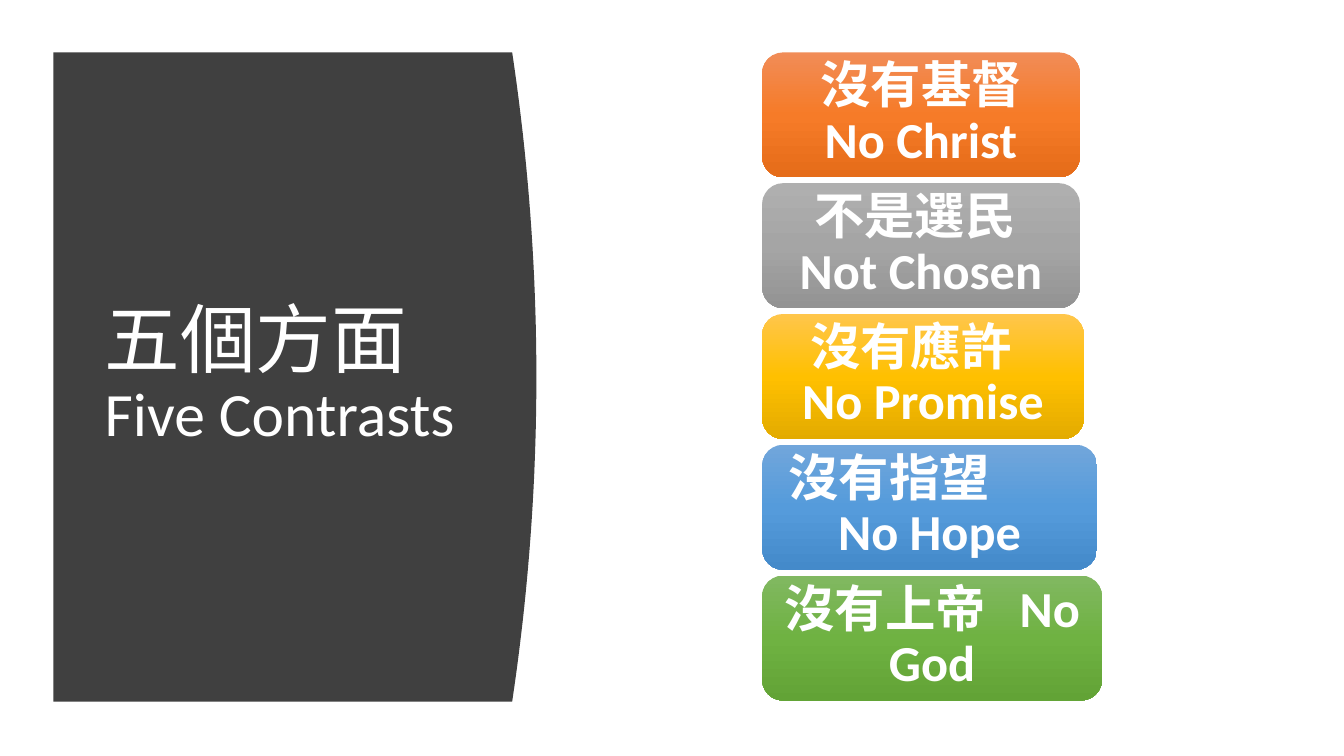
from dataclasses import dataclass

from lxml import etree
from pptx import Presentation
from pptx.dml.color import RGBColor
from pptx.enum.shapes import MSO_SHAPE
from pptx.enum.text import MSO_ANCHOR, PP_ALIGN
from pptx.oxml.ns import qn
from pptx.util import Inches, Pt

ROUND = MSO_SHAPE.ROUNDED_RECTANGLE
MIDDLE = MSO_ANCHOR.MIDDLE
CENTER = PP_ALIGN.CENTER


@dataclass(frozen=True)
class Theme:
    panel: str = "404040"
    text: str = "FFFFFF"
    latin: str = "Calibri"
    head: str = "Roboto"
    han: str = "Noto Sans CJK SC"
    head_size: int = 54
    sub_size: int = 44
    tile_size: int = 36
    spacing: float = 0.9


THEME = Theme()

# Chinese, English, tile width, right indent of the Chinese line, gradient
TILES = [
    ("沒有基督", "No Christ", 3.15, 0, ("F18C57", "F67B28", "E56C19")),
    ("不是選民", "Not Chosen", 3.15, 0.12, ("AFAFAF", "A5A5A5", "939393")),
    ("沒有應許", "No Promise", 3.19, 0.24, ("FFC64B", "FFC000", "E3AB00")),
    ("沒有指望", "No Hope", 3.32, 0.8, ("71A6DB", "559BDB", "448ACA")),
]
LAST = (3.37, ("81B861", "6FB242", "62A336"))


def style(run, face, size, bold=False):
    font = run.font
    font.size, font.bold, font.name = Pt(size), bold, face
    font.color.rgb = RGBColor.from_string(THEME.text)
    east = etree.SubElement(run._r.get_or_add_rPr(), qn("a:ea"))
    east.set("typeface", face)


def shade(shape, colors):
    """Fill with evenly spaced colours from top to bottom."""
    shape.fill.gradient()
    shape.fill.gradient_angle = 270
    stops = shape._element.spPr.find(qn("a:gradFill")).find(qn("a:gsLst"))
    for stop in list(stops):
        stops.remove(stop)
    for i, color in enumerate(colors):
        stop = etree.SubElement(stops, qn("a:gs"), pos=str(i * 50000))
        etree.SubElement(stop, qn("a:srgbClr"), val=color)


def add_panel(slide, x, y, w, h):
    """Dark panel with a bowed right edge, holding the title."""
    bulge, steps = 0.24, 40
    edge = []
    for i in range(steps + 1):
        t = i / steps
        bow = bulge * (1 - (2 * t - 1) ** 2)
        edge.append((Inches(x + w - bulge + bow), Inches(y + h * t)))
    form = slide.shapes.build_freeform(Inches(x), Inches(y))
    form.add_line_segments(edge + [(Inches(x), Inches(y + h))], close=True)
    panel = form.convert_to_shape()
    panel.shadow.inherit = False
    panel.fill.solid()
    panel.fill.fore_color.rgb = RGBColor.from_string(THEME.panel)
    panel.line.fill.background()

    box = slide.shapes.add_textbox(
        Inches(x + 0.41), Inches(y + 0.59), Inches(3.74), Inches(h - 1.2))
    frame = box.text_frame
    frame.word_wrap = True
    frame.vertical_anchor = MIDDLE
    para = frame.paragraphs[0]
    para.text = "五個方面\vFive Contrasts"
    para.line_spacing = THEME.spacing
    style(para.runs[0], THEME.head, THEME.head_size)
    style(para.runs[1], THEME.latin, THEME.sub_size)


def add_tile(slide, x, y, w, h, colors):
    tile = slide.shapes.add_shape(
        ROUND, Inches(x), Inches(y), Inches(w), Inches(h))
    tile.shadow.inherit = False
    tile.line.fill.background()
    shade(tile, colors)
    frame = tile.text_frame
    frame.word_wrap = True
    frame.vertical_anchor = MIDDLE
    frame.margin_left = frame.margin_right = Inches(0.05)
    frame.margin_top = frame.margin_bottom = Inches(0.07)
    return frame


def set_lines(frame, lines, indent=0):
    """Centre one paragraph per list of (text, face) runs; indent the first."""
    for i, parts in enumerate(lines):
        para = frame.add_paragraph() if i else frame.paragraphs[0]
        para.alignment = CENTER
        para.line_spacing = THEME.spacing
        props = para._p.get_or_add_pPr()
        props.set("marL", "0")
        props.set("marR", str(0 if i else Inches(indent)))
        props.set("indent", "0")
        for text, face in parts:
            run = para.add_run()
            run.text = text
            style(run, face, THEME.tile_size, True)


def add_list(slide, x, y, h):
    """Stack of five tiles, equally spaced over the height."""
    tall = 1.24
    pitch = (h - tall) / len(TILES)
    for i, (han, latin, w, indent, colors) in enumerate(TILES):
        frame = add_tile(slide, x, y + i * pitch, w, tall, colors)
        set_lines(frame, [[(han, THEME.han)], [(latin, THEME.latin)]], indent)

    w, colors = LAST
    frame = add_tile(slide, x, y + h - tall, w, tall, colors)
    set_lines(frame, [
        [("沒有上帝", THEME.han), (" ", THEME.han), ("No", THEME.latin)],
        [("God", THEME.latin)]])
    gap = frame.paragraphs[0].runs[1]
    gap._r.get_or_add_rPr().set("spc", "1600")


def main():
    deck = Presentation()
    deck.slide_width, deck.slide_height = Inches(13.33), Inches(7.5)
    slide = deck.slides.add_slide(deck.slide_layouts[6])
    add_panel(slide, 0.53, 0.52, 4.79, 6.44)
    add_list(slide, 7.56, 0.52, 6.43)
    deck.save("out.pptx")


if __name__ == "__main__":
    main()
